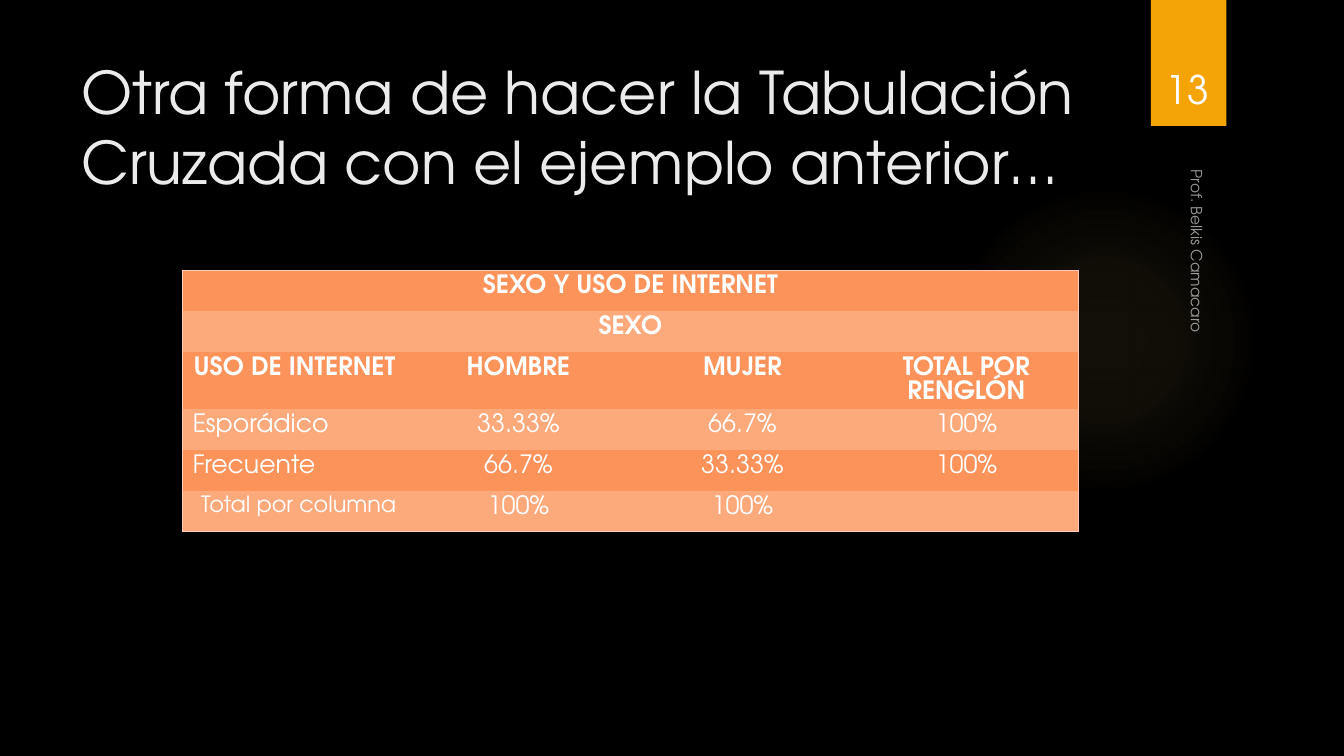
from dataclasses import dataclass

import pptx
import pptx.dml.color
import pptx.enum.shapes
import pptx.enum.text
import pptx.oxml
import pptx.oxml.ns
import pptx.util

Pt = pptx.util.Pt
Align = pptx.enum.text.PP_ALIGN
Anchor = pptx.enum.text.MSO_ANCHOR
Shape = pptx.enum.shapes.MSO_SHAPE
NAMESPACE = pptx.oxml.ns.nsdecls("a")


@dataclass(frozen=True)
class Theme:
    font: str = "TeX Gyre Adventor"
    background: str = "000000"
    title: str = "EBEBEB"
    text: str = "FFFFFF"
    accent: str = "F5A408"
    glow: str = "FAC96A"
    band_dark: str = "FB935B"
    band_light: str = "FCA97C"
    border: str = "FDC9BD"
    title_size: float = 42
    number_size: float = 28
    table_size: float = 18
    total_size: float = 16
    footer_size: float = 11


@dataclass(frozen=True)
class Box:
    left: float
    top: float
    width: float
    height: float

    def lengths(self) -> tuple:
        return Pt(self.left), Pt(self.top), Pt(self.width), Pt(self.height)


@dataclass(frozen=True)
class Label:
    text: str
    box: Box
    size: float
    align: Align = Align.LEFT
    rotation: float = 0
    opacity: int = 100


THEME = Theme()
TITLE = "Otra forma de hacer la Tabulación Cruzada con el ejemplo anterior…"
TITLE_BOX = Box(51, 36, 741, 110)
GLOW_BOX = Box(677.5, 131.8, 221.8, 221.8)
TAB_BOX = Box(822, 0, 54, 90)
TABLE_BOX = Box(130.3, 193, 640, 175.2)
LABELS = [
    Label("Prof. Belkis Camacaro", Box(704.9, 254.2, 303.8, 23.8),
          THEME.footer_size, rotation=90, opacity=60),
    Label("13", Box(815, 23, 66.2, 60.5), THEME.number_size, Align.CENTER),
]
ROWS = [
    ["SEXO Y USO DE INTERNET", "", "", ""],
    ["", "SEXO", "", ""],
    ["USO DE INTERNET", "HOMBRE", "MUJER", "TOTAL POR RENGLÓN"],
    ["Esporádico", "33.33%", "66.7%", "100%"],
    ["Frecuente", "66.7%", "33.33%", "100%"],
    ["Total por columna", "100%", "100%", ""],
]
HEADER_ROWS = 3
MERGES = [((0, 0), (0, 3)), ((1, 1), (1, 2))]


def rgb(colour: str) -> pptx.dml.color.RGBColor:
    return pptx.dml.color.RGBColor.from_string(colour)


def style_font(para, size: float, colour: str, bold: bool = False) -> None:
    font = para.font
    font.name = THEME.font
    font.size = Pt(size)
    font.bold = bold
    font.color.rgb = rgb(colour)


def add_plain_shape(page, kind: Shape, box: Box):
    shape = page.shapes.add_shape(kind, *box.lengths())
    shape.shadow.inherit = False
    shape.line.fill.background()
    return shape


def add_glow(page) -> None:
    glow = add_plain_shape(page, Shape.OVAL, GLOW_BOX)
    stops = "".join(
        f'<a:gs pos="{place * 1000}"><a:srgbClr val="{THEME.glow}">'
        f'<a:alpha val="{opacity * 1000}"/></a:srgbClr></a:gs>'
        for place, opacity in [(0, 7), (36, 6), (69, 0), (100, 0)])
    gradient = pptx.oxml.parse_xml(
        f'<a:gradFill {NAMESPACE}><a:gsLst>{stops}</a:gsLst><a:path path="circle">'
        '<a:fillToRect l="50000" t="50000" r="50000" b="50000"/></a:path></a:gradFill>')
    glow.element.spPr.find(pptx.oxml.ns.qn("a:prstGeom")).addnext(gradient)


def add_title(page) -> None:
    title = page.shapes.title
    title.left, title.top, title.width, title.height = TITLE_BOX.lengths()
    title.text_frame.text = TITLE
    title.text_frame.word_wrap = True
    title.text_frame.vertical_anchor = Anchor.TOP
    para = title.text_frame.paragraphs[0]
    para.alignment = Align.LEFT
    style_font(para, THEME.title_size, THEME.title)


def add_label(page, label: Label) -> None:
    box = page.shapes.add_textbox(*label.box.lengths())
    box.rotation = label.rotation
    box.text_frame.word_wrap = True
    box.text_frame.vertical_anchor = Anchor.BOTTOM
    para = box.text_frame.paragraphs[0]
    para.text = label.text
    para.alignment = label.align
    style_font(para, label.size, THEME.text)
    if label.opacity < 100:
        colour = next(para.font.fill._xPr.iter(pptx.oxml.ns.qn("a:srgbClr")))
        colour.append(pptx.oxml.parse_xml(
            f'<a:alpha {NAMESPACE} val="{label.opacity * 1000}"/>'))


def set_borders(cell, outer_sides: dict[str, bool]) -> None:
    """Draw the outer sides of the table and blank the inner ones."""
    properties = cell._tc.get_or_add_tcPr()
    for place, (side, outer) in enumerate(outer_sides.items()):
        fill = (f'<a:solidFill><a:srgbClr val="{THEME.border}"/></a:solidFill>'
                if outer else "<a:noFill/>")
        properties.insert(place, pptx.oxml.parse_xml(
            f'<a:{side} {NAMESPACE} w="{Pt(0.75)}">{fill}</a:{side}>'))


def cell_align(row: int, column: int) -> Align:
    if row < HEADER_ROWS or column > 0:
        return Align.CENTER
    return Align.RIGHT if row == len(ROWS) - 1 else Align.LEFT


def add_crosstab(page) -> None:
    last_row, last_column = len(ROWS) - 1, len(ROWS[0]) - 1
    frame = page.shapes.add_table(len(ROWS), len(ROWS[0]), *TABLE_BOX.lengths())
    table = frame.table
    table.first_row = table.horz_banding = False
    merge_ends = dict(MERGES)
    for row, texts in enumerate(ROWS):
        for column, text in enumerate(texts):
            cell = table.cell(row, column)
            cell.fill.solid()
            cell.fill.fore_color.rgb = rgb(
                THEME.band_light if row % 2 else THEME.band_dark)
            end_column = merge_ends.get((row, column), (row, column))[1]
            set_borders(cell, {"lnL": column == 0, "lnR": end_column == last_column,
                               "lnT": row == 0, "lnB": row == last_row})
            para = cell.text_frame.paragraphs[0]
            para.text = text
            para.alignment = cell_align(row, column)
            is_total = row == last_row and column == 0
            style_font(para, THEME.total_size if is_total else THEME.table_size,
                       THEME.text, row < HEADER_ROWS)
    for start, end in MERGES:
        table.cell(*start).merge(table.cell(*end))


def main() -> None:
    deck = pptx.Presentation()
    deck.slide_width, deck.slide_height = Pt(960), Pt(540)
    page = deck.slides.add_slide(deck.slide_layouts[5])
    page.background.fill.solid()
    page.background.fill.fore_color.rgb = rgb(THEME.background)
    add_glow(page)
    tab = add_plain_shape(page, Shape.RECTANGLE, TAB_BOX)
    tab.fill.solid()
    tab.fill.fore_color.rgb = rgb(THEME.accent)
    add_title(page)
    add_crosstab(page)
    for label in LABELS:
        add_label(page, label)
    deck.save("out.pptx")


if __name__ == "__main__":
    main()
